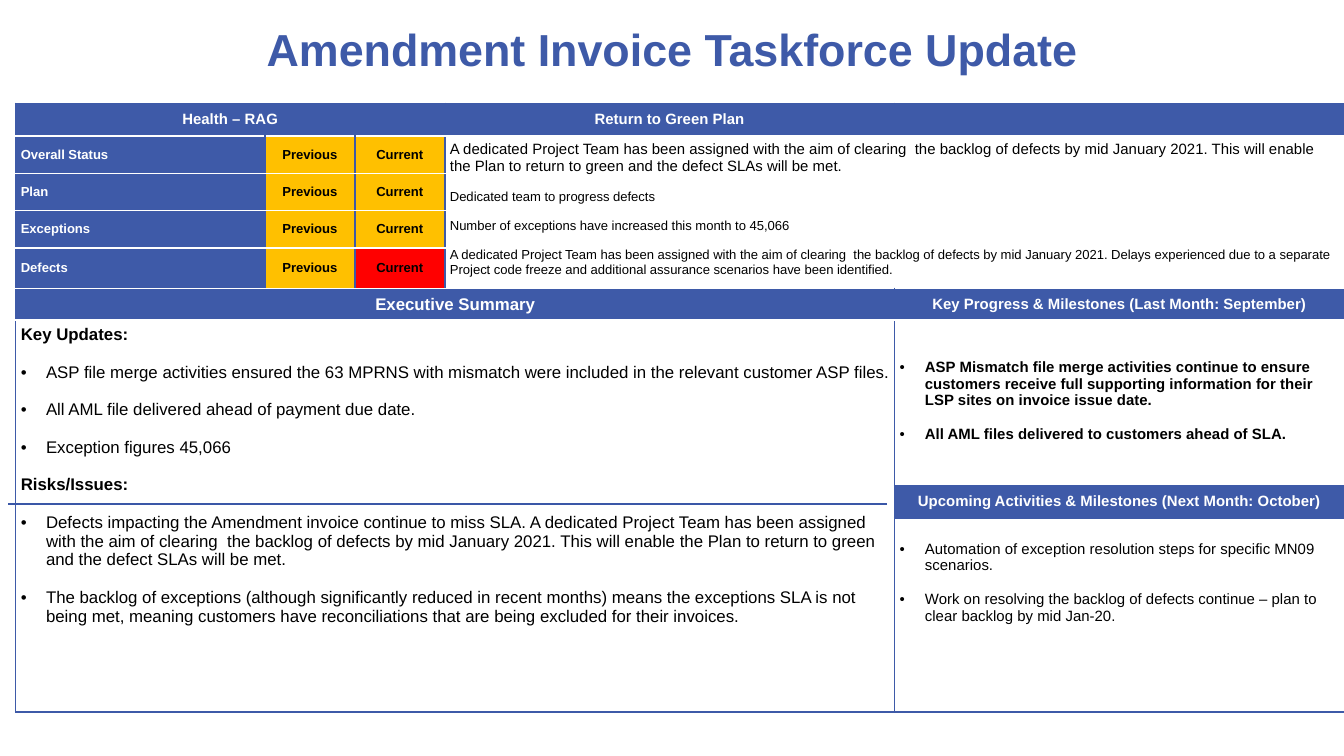
"""Builds the Amendment Invoice Taskforce status slide."""
from lxml import etree
from pptx import Presentation
from pptx.dml.color import RGBColor
from pptx.enum.shapes import MSO_CONNECTOR
from pptx.enum.text import MSO_ANCHOR, PP_ALIGN
from pptx.oxml.ns import qn
from pptx.util import Pt

STRAIGHT = MSO_CONNECTOR.STRAIGHT
MIDDLE, TOP = MSO_ANCHOR.MIDDLE, MSO_ANCHOR.TOP
CENTER, LEFT = PP_ALIGN.CENTER, PP_ALIGN.LEFT
BLUE = RGBColor(0x3E, 0x5A, 0xA8)
RULE_BLUE = RGBColor(0x3A, 0x57, 0xA7)
WHITE = RGBColor(0xFF, 0xFF, 0xFF)
BLACK = RGBColor(0, 0, 0)
AMBER = RGBColor(0xFF, 0xC0, 0x00)
RED = RGBColor(0xFF, 0, 0)
FONT = "Arial"
COLUMN_WIDTHS = [133.5, 48.2, 48.2, 241, 241]
ROW_HEIGHTS = [17.5, 20, 20, 20, 20, 17, 88.5, 17.5, 104]
INDENT = Pt(13.5)


def add_text(paragraph, text, size, color, bold, align=LEFT):
    paragraph.alignment = align
    run = paragraph.add_run()
    run.text = text
    run.font.name = FONT
    run.font.size = Pt(size)
    run.font.bold = bold
    run.font.color.rgb = color


def add_paragraphs(cell, entries, gap, top_margin=2.8):
    cell.vertical_anchor = TOP
    cell.margin_top = Pt(top_margin)
    for i, (text, size, bold, bulleted) in enumerate(entries):
        paragraph = cell.text_frame.paragraphs[0] if i == 0 else cell.text_frame.add_paragraph()
        if i:
            paragraph.space_before = Pt(gap)
        if bulleted:
            properties = paragraph._p.get_or_add_pPr()
            properties.set("marL", str(INDENT))
            properties.set("indent", str(-INDENT))
            etree.SubElement(properties, qn("a:buFont"), typeface=FONT)
            etree.SubElement(properties, qn("a:buChar"), char="•")
        add_text(paragraph, text, size, BLACK, bold)


prs = Presentation()
prs.slide_width, prs.slide_height = Pt(720), Pt(405)
slide = prs.slides.add_slide(prs.slide_layouts[6])

title = slide.shapes.add_textbox(Pt(36), Pt(6.5), Pt(648), Pt(44)).text_frame
title.word_wrap = True
title.vertical_anchor = MIDDLE
title.margin_bottom = Pt(8)
add_text(title.paragraphs[0], "Amendment Invoice Taskforce Update", 24, BLUE, True, CENTER)

report = slide.shapes.add_table(
    len(ROW_HEIGHTS), len(COLUMN_WIDTHS), Pt(8.4), Pt(55.4),
    Pt(sum(COLUMN_WIDTHS)), Pt(sum(ROW_HEIGHTS))).table
report.first_row = report.horz_banding = False
for column, width in zip(report.columns, COLUMN_WIDTHS):
    column.width = Pt(width)
for row, height in zip(report.rows, ROW_HEIGHTS):
    row.height = Pt(height)

for r in range(len(ROW_HEIGHTS)):
    for c in range(len(COLUMN_WIDTHS)):
        cell = report.cell(r, c)
        cell.margin_left = cell.margin_right = cell.margin_top = cell.margin_bottom = Pt(2.8)
        cell.vertical_anchor = MIDDLE
        cell.fill.background()
        top = BLUE if r == 0 or (r > 6 and c == 4) else WHITE
        bottom = BLUE if r > 5 else WHITE
        borders = [("L", BLUE), ("R", BLUE), ("T", top), ("B", bottom)]
        for i, (side, color) in enumerate(borders):
            border = etree.Element(qn(f"a:ln{side}"), w=str(Pt(1)))
            solid = etree.SubElement(border, qn("a:solidFill"))
            etree.SubElement(solid, qn("a:srgbClr"), val=str(color))
            cell._tc.tcPr.insert(i, border)

for first, last in [((0, 0), (0, 2)), ((1, 3), (4, 4)), ((5, 0), (5, 3)), ((6, 0), (8, 3))]:
    report.cell(*first).merge(report.cell(*last))

headings = [
    (0, 0, "Health – RAG", 8),
    (0, 3, "Return to Green Plan", 8),
    (5, 0, "Executive Summary", 9),
    (5, 4, "Key Progress & Milestones (Last Month: September)", 8),
    (7, 4, "Upcoming Activities & Milestones (Next Month: October)", 8),
]
for r, c, heading, size in headings:
    cell = report.cell(r, c)
    cell.fill.solid()
    cell.fill.fore_color.rgb = BLUE
    add_text(cell.text_frame.paragraphs[0], heading, size, WHITE, True, CENTER)
report.cell(0, 4).fill.solid()
report.cell(0, 4).fill.fore_color.rgb = BLUE

health = [("Overall Status", AMBER), ("Plan", AMBER), ("Exceptions", AMBER), ("Defects", RED)]
for r, (area, current) in enumerate(health, start=1):
    ratings = [(area, BLUE, WHITE, LEFT), ("Previous", AMBER, BLACK, CENTER),
               ("Current", current, BLACK, CENTER)]
    for c, (label, fill, color, align) in enumerate(ratings):
        cell = report.cell(r, c)
        cell.fill.solid()
        cell.fill.fore_color.rgb = fill
        add_text(cell.text_frame.paragraphs[0], label, 7, color, True, align)

TEAM = ("A dedicated Project Team has been assigned with the aim of clearing  "
        "the backlog of defects by mid January 2021. ")
OUTCOME = "This will enable the Plan to return to green and the defect SLAs will be met."
add_paragraphs(report.cell(1, 3), [
    (TEAM + OUTCOME, 8, False, False),
    ("Dedicated team to progress defects", 7, False, False),
    ("Number of exceptions have increased this month to 45,066", 7, False, False),
    (TEAM + "Delays experienced due to a separate Project code freeze and additional "
     "assurance scenarios have been identified.", 7, False, False),
], 7.8)
add_paragraphs(report.cell(6, 0), [
    ("Key Updates:", 9, True, False),
    ("ASP file merge activities ensured the 63 MPRNS with mismatch were included "
     "in the relevant customer ASP files.", 9, False, True),
    ("All AML file delivered ahead of payment due date.", 9, False, True),
    ("Exception figures 45,066", 9, False, True),
    ("Risks/Issues:", 9, True, False),
    ("Defects impacting the Amendment invoice continue to miss SLA. " + TEAM + OUTCOME,
     9, False, True),
    ("The backlog of exceptions (although significantly reduced in recent months) means "
     "the exceptions SLA is not being met, meaning customers have reconciliations that "
     "are being excluded for their invoices.", 9, False, True),
], 10)
add_paragraphs(report.cell(6, 4), [
    ("ASP Mismatch file merge activities continue to ensure customers receive full "
     "supporting information for their LSP sites on invoice issue date.", 8, True, True),
    ("All AML files delivered to customers ahead of SLA.", 8, True, True),
], 9, 20.6)
add_paragraphs(report.cell(8, 4), [
    ("Automation of exception resolution steps for specific MN09 scenarios.", 8, False, True),
    ("Work on resolving the backlog of defects continue – plan to clear backlog "
     "by mid Jan-20.", 8, False, True),
], 9, 12)

for cell in report.iter_cells():
    if not cell.text_frame.text:
        etree.SubElement(cell.text_frame.paragraphs[0]._p, qn("a:endParaRPr"), sz="700")

risks_rule = slide.shapes.add_connector(STRAIGHT, Pt(475.2), Pt(270), Pt(4.3), Pt(270))
risks_rule.line.color.rgb = RULE_BLUE
risks_rule.line.width = Pt(0.75)
etree.SubElement(risks_rule._element.spPr, qn("a:effectLst"))

prs.save("out.pptx")
